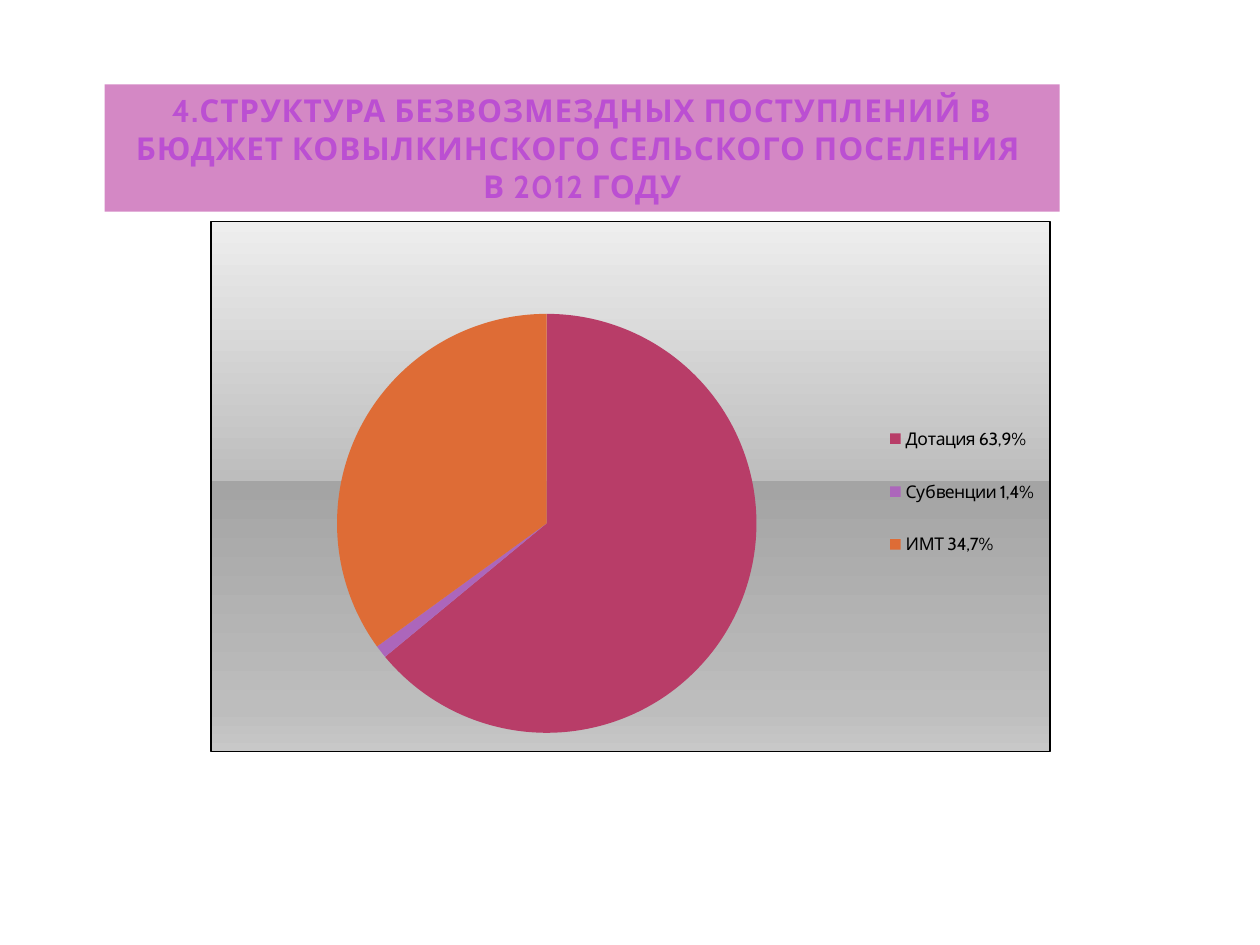
"""Build the slide on the structure of grants to the settlement budget."""
from lxml import etree
from pptx import Presentation
from pptx.chart.data import CategoryChartData
from pptx.dml.color import RGBColor
from pptx.enum.chart import XL_CHART_TYPE, XL_LEGEND_POSITION
from pptx.enum.shapes import MSO_SHAPE
from pptx.enum.text import MSO_ANCHOR, PP_ALIGN
from pptx.oxml import parse_xml
from pptx.oxml.ns import nsdecls, qn
from pptx.util import Inches, Pt

PIE = XL_CHART_TYPE.PIE
LEGEND_RIGHT = XL_LEGEND_POSITION.RIGHT
RECTANGLE = MSO_SHAPE.RECTANGLE
MIDDLE = MSO_ANCHOR.MIDDLE
CENTER = PP_ALIGN.CENTER

FONT = "Cabin"
COLORS = {
    "banner": "D488C5",
    "title_top": "BB4FD2",
    "title_bottom": "863598",
    "text": "000000",
    "grants": "B83D68",
    "subventions": "AC66BB",
    "transfers": "DE6C36",
}
BACKGROUND_STOPS = [(0, "EEEEEE"), (49, "BDBDBD"), (49, "A4A4A4"), (92, "BDBDBD"), (100, "C8C8C8")]
SLICES = [
    ("Дотация 63,9%", 64, "grants"),
    ("Субвенции 1,4%", 1, "subventions"),
    ("ИМТ 34,7%", 35, "transfers"),
]
TITLE_LINES = [
    "4.СТРУКТУРА БЕЗВОЗМЕЗДНЫХ ПОСТУПЛЕНИЙ В БЮДЖЕТ КОВЫЛКИНСКОГО СЕЛЬСКОГО ПОСЕЛЕНИЯ ",
    "В 2012 ГОДУ",
]


def manual_layout(x, y, width, height, inner=False):
    layout = etree.Element(qn("c:layout"))
    manual = etree.SubElement(layout, qn("c:manualLayout"))
    settings = [("xMode", "edge"), ("yMode", "edge"), ("x", x), ("y", y), ("w", width), ("h", height)]
    if inner:
        settings.insert(0, ("layoutTarget", "inner"))
    for name, value in settings:
        etree.SubElement(manual, qn(f"c:{name}")).set("val", str(value))
    return layout


presentation = Presentation()
presentation.slide_width = Inches(10)
presentation.slide_height = Inches(7.5)
slide = presentation.slides.add_slide(presentation.slide_layouts[6])

chart_data = CategoryChartData()
chart_data.categories = [label for label, value, color in SLICES]
chart_data.add_series("Series 1", [value for label, value, color in SLICES])
chart = slide.shapes.add_chart(
    PIE, Inches(1.67), Inches(1.75), Inches(6.67), Inches(4.22), chart_data
).chart
chart.has_title = False
chart.font.name = FONT
chart.font.size = Pt(10)
chart.font.color.rgb = RGBColor.from_string(COLORS["text"])

plot = chart.plots[0]
plot.vary_by_categories = True
for index, (label, value, color) in enumerate(SLICES):
    fill = plot.series[0].points[index].format.fill
    fill.solid()
    fill.fore_color.rgb = RGBColor.from_string(COLORS[color])

chart.has_legend = True
chart.legend.position = LEGEND_RIGHT
chart.legend.include_in_layout = False

chart_space = chart.element
plot_area = chart_space.find(".//" + qn("c:plotArea"))
for layout in plot_area.findall(qn("c:layout")):
    plot_area.remove(layout)
plot_area.insert(0, manual_layout(0.15, 0.17, 0.5, 0.8, inner=True))
legend = chart_space.find(".//" + qn("c:legend"))
for layout in legend.findall(qn("c:layout")):
    legend.remove(layout)
legend.find(qn("c:legendPos")).addnext(manual_layout(0.8, 0.33, 0.19, 0.36))

stops = "".join(
    f'<a:gs pos="{position * 1000}"><a:srgbClr val="{color}"/></a:gs>'
    for position, color in BACKGROUND_STOPS
)
chart_space.find(qn("c:chart")).addnext(parse_xml(
    f'<c:spPr {nsdecls("c", "a")}>'
    f'<a:gradFill><a:gsLst>{stops}</a:gsLst><a:lin ang="5400000" scaled="0"/></a:gradFill>'
    f'<a:ln w="{Pt(0.9)}"><a:solidFill><a:srgbClr val="{COLORS["text"]}"/></a:solidFill></a:ln>'
    '</c:spPr>'
))

banner = slide.shapes.add_shape(RECTANGLE, Inches(0.83), Inches(0.67), Inches(7.58), Inches(1.01))
banner.shadow.inherit = False
banner.fill.solid()
banner.fill.fore_color.rgb = RGBColor.from_string(COLORS["banner"])
banner.line.fill.background()
text_frame = banner.text_frame
text_frame.word_wrap = True
text_frame.vertical_anchor = MIDDLE
for index, line in enumerate(TITLE_LINES):
    paragraph = text_frame.add_paragraph() if index else text_frame.paragraphs[0]
    paragraph.alignment = CENTER
    run = paragraph.add_run()
    run.text = line
    run.font.name = FONT
    run.font.size = Pt(18)
    run.font.bold = True
    run.font.fill.gradient()
    run.font.fill.gradient_angle = 270
    for stop, position, color in zip(
        run.font.fill.gradient_stops, (0.25, 1), ("title_top", "title_bottom")
    ):
        stop.position = position
        stop.color.rgb = RGBColor.from_string(COLORS[color])
    run.font._element.set("spc", "50")

presentation.save("out.pptx")
